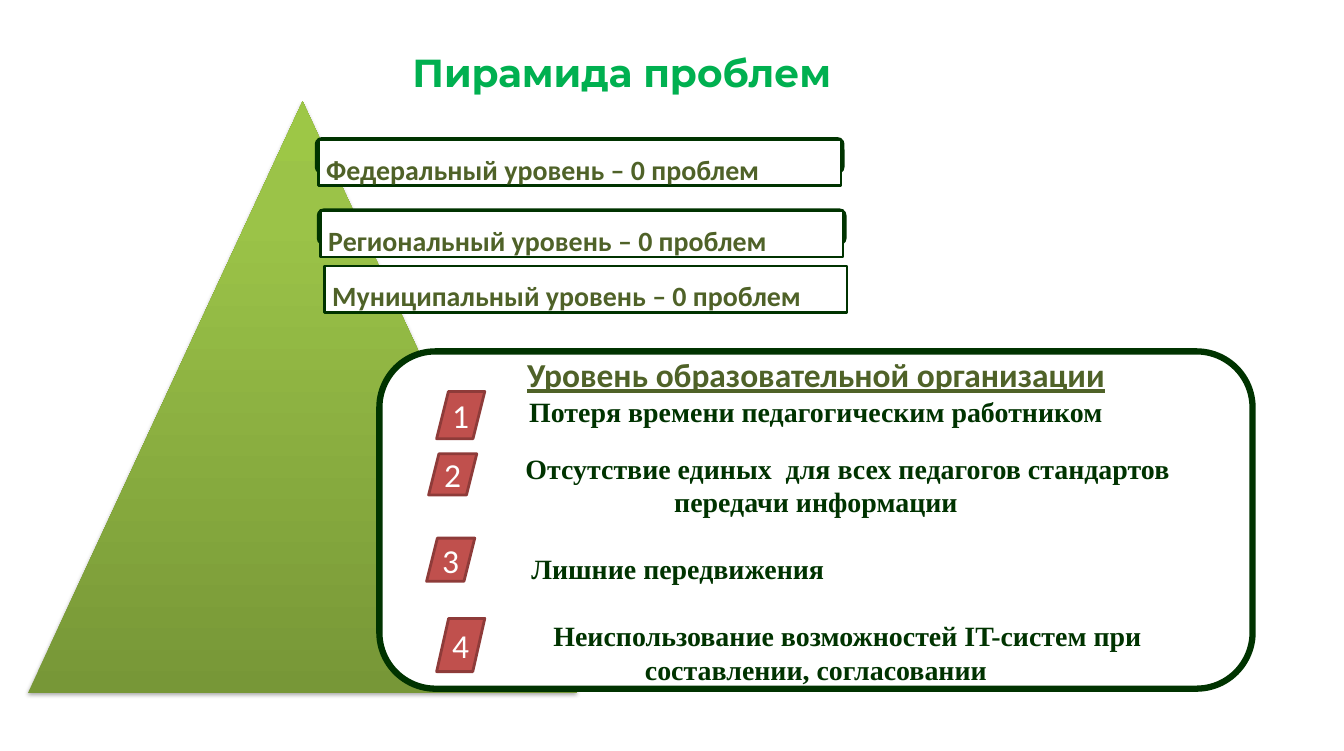
from copy import deepcopy

from lxml import etree
from pptx import Presentation
from pptx.dml.color import RGBColor
from pptx.enum.shapes import MSO_SHAPE as Shape
from pptx.enum.text import MSO_ANCHOR as Anchor, PP_ALIGN as Align
from pptx.oxml.ns import qn
from pptx.util import Inches, Pt

WIDTH, HEIGHT = 13.39, 7.48
COLORS = {
    "title": "00B050", "olive": "4F6228", "dark": "003300", "white": "FFFFFF",
    "badge": "C0504D", "badge_line": "8E3B39", "shadow": "000000",
}
PYRAMID_STOPS = [(0, "779737"), (0.8, "9BC348"), (1, "9DC746")]

# Label text, left and top; the flag adds the rounded plate behind
LEVELS = [
    ("Федеральный уровень – 0 проблем", 3.17, 1.39, True),
    ("Региональный уровень – 0 проблем", 3.19, 2.1, True),
    ("Муниципальный уровень – 0 проблем", 3.23, 2.65, False),
]
# Problem text, space before (pt), first-line indent (in), alignment
PROBLEMS = [
    ("Потеря времени педагогическим работником", 0, 0, Align.CENTER),
    ("Отсутствие единых  для всех педагогов стандартов передачи информации",
     17, 0.63, Align.CENTER),
    ("Лишние передвижения", 24, 1.15, Align.LEFT),
    ("Неиспользование возможностей IT-систем при составлении, согласовании",
     24, 0.63, Align.CENTER),
]
# Badge left, top and height, relative to the panel
BADGES = [(0.57, 0.4, 0.47), (0.49, 1.02, 0.41), (0.47, 1.86, 0.43), (0.57, 2.66, 0.53)]


def color(name):
    return RGBColor.from_string(COLORS[name])


def add_box(slide, kind, box, fill, line, line_width):
    shape = slide.shapes.add_shape(kind, *map(Inches, box))
    shape.shadow.inherit = False
    shape.fill.solid()
    shape.fill.fore_color.rgb = color(fill)
    shape.line.color.rgb = color(line)
    shape.line.width = Pt(line_width)
    return shape


def set_frame(shape, anchor, inset_x=0, wrap=True):
    frame = shape.text_frame
    frame.word_wrap = wrap
    frame.vertical_anchor = anchor
    frame.margin_left = frame.margin_right = Inches(inset_x)
    frame.margin_top = frame.margin_bottom = 0
    return frame


def write(paragraph, text, size, font_name, color_name, align, bold=True):
    paragraph.text = text
    paragraph.alignment = align
    for run in paragraph.runs:
        run.font.size = Pt(size)
        run.font.name = font_name
        run.font.bold = bold
        run.font.color.rgb = color(color_name)


def add_title(slide, box):
    title = slide.shapes.add_textbox(*map(Inches, box))
    frame = set_frame(title, Anchor.MIDDLE, wrap=False)
    write(frame.paragraphs[0], "Пирамида проблем", 28, "Montserrat", "title", Align.CENTER)


def add_pyramid(slide, box):
    pyramid = slide.shapes.add_shape(Shape.FLOWCHART_EXTRACT, *map(Inches, box))
    pyramid.line.fill.background()
    pyramid.fill.gradient()
    pyramid.fill.gradient_angle = 90
    # A third gradient stop
    stop_list = pyramid._element.spPr.find(".//" + qn("a:gsLst"))
    stop_list.insert(1, deepcopy(stop_list[0]))
    for stop, (position, value) in zip(pyramid.fill.gradient_stops, PYRAMID_STOPS):
        stop.position = position
        stop.color.rgb = RGBColor.from_string(value)
    # Soft shadow below
    pyramid.shadow.inherit = False
    effects = pyramid._element.spPr.find(qn("a:effectLst"))
    shadow = etree.SubElement(effects, qn("a:outerShdw"), blurRad=str(Pt(3.1)),
                              dist=str(Pt(1.8)), dir="5400000", rotWithShape="0")
    tint = etree.SubElement(shadow, qn("a:srgbClr"), val=COLORS["shadow"])
    etree.SubElement(tint, qn("a:alpha"), val="35000")


def add_level(slide, box, text, has_plate):
    left, top, width, height = box
    if has_plate:
        plate = (left - 0.02, top - 0.01, width + 0.04, 0.34)
        add_box(slide, Shape.ROUNDED_RECTANGLE, plate, "white", "dark", 2)
    label = add_box(slide, Shape.RECTANGLE, box, "white", "dark", 2)
    frame = set_frame(label, Anchor.BOTTOM, 0.08)
    write(frame.paragraphs[0], text, 20, "Calibri", "olive", Align.LEFT)


def add_panel(slide, box):
    left, top, width, height = box
    panel = add_box(slide, Shape.ROUNDED_RECTANGLE, box, "white", "dark", 4.5)
    frame = set_frame(panel, Anchor.MIDDLE, 0.2)
    heading = frame.paragraphs[0]
    write(heading, "Уровень образовательной организации", 24, "Calibri", "olive", Align.CENTER)
    heading.runs[0].font.underline = True

    # Problems
    for text, space, indent, align in PROBLEMS:
        paragraph = frame.add_paragraph()
        write(paragraph, text, 20, "Times New Roman", "dark", align)
        paragraph.space_before = Pt(space)
        paragraph.line_spacing = Pt(24)
        properties = paragraph._p.get_or_add_pPr()
        properties.set("marL", "0")
        properties.set("indent", str(Inches(indent)))

    # Numbered badges
    for number, (x, y, badge_height) in enumerate(BADGES, 1):
        place = (left + x, top + y, 0.48, badge_height)
        badge = add_box(slide, Shape.PARALLELOGRAM, place, "badge", "badge_line", 2)
        frame = set_frame(badge, Anchor.MIDDLE, wrap=False)
        write(frame.paragraphs[0], str(number), 24, "Calibri", "white", Align.CENTER, False)


def main():
    presentation = Presentation()
    presentation.slide_width = Inches(WIDTH)
    presentation.slide_height = Inches(HEIGHT)
    slide = presentation.slides.add_slide(presentation.slide_layouts[6])
    add_title(slide, (3.94, 0.43, 4.51, 0.57))
    add_pyramid(slide, (0.28, 1.01, 5.47, 5.89))
    for text, left, top, has_plate in LEVELS:
        add_level(slide, (left, top, 5.21, 0.46), text, has_plate)
    add_panel(slide, (3.78, 3.5, 8.7, 3.36))
    presentation.save("out.pptx")


if __name__ == "__main__":
    main()
